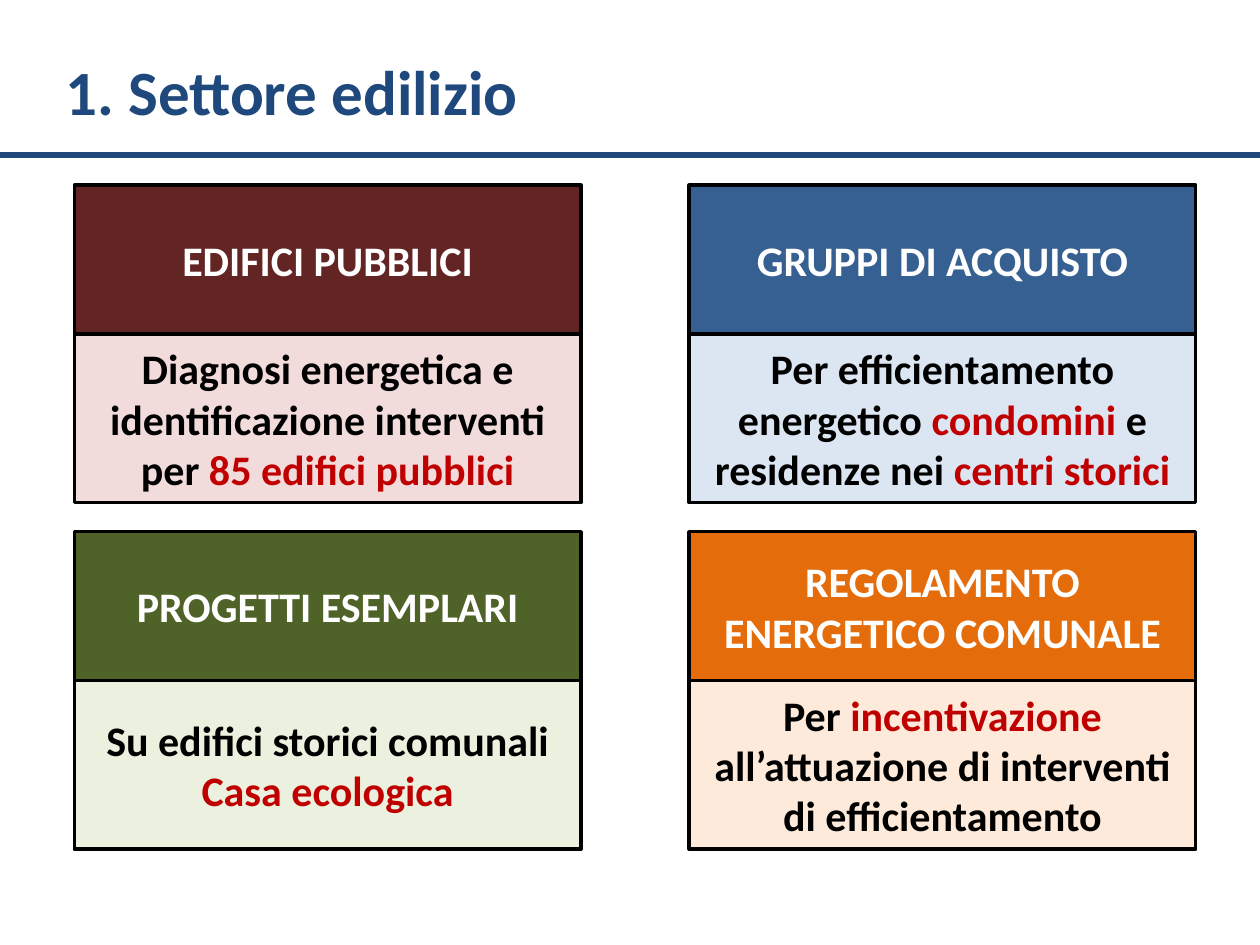
import pptx
import pptx.dml.color
import pptx.enum.shapes
import pptx.enum.text
import pptx.oxml.ns
import pptx.util
from lxml import etree

COLUMN_LEFTS = (0.59, 5.47)
ROW_TOPS = (1.47, 4.22)
CARD_WIDTH = 4.02
HEADING_HEIGHT = 1.18
DETAIL_HEIGHT = 1.34
NAVY, BLACK, WHITE, RED = "1F497D", "000000", "FFFFFF", "C00000"

CARDS = [
    (0, 0, "632523", "F2DCDB", "EDIFICI PUBBLICI",
     [[("Diagnosi energetica e identificazione interventi per ", BLACK),
       ("85 edifici pubblici", RED)]]),
    (1, 0, "376092", "DCE6F2", "GRUPPI DI ACQUISTO",
     [[("Per efficientamento energetico ", BLACK), ("condomini ", RED),
       ("e residenze nei ", BLACK), ("centri storici", RED)]]),
    (1, 1, "E46C0A", "FDEADA", "REGOLAMENTO ENERGETICO COMUNALE",
     [[("Per ", BLACK), ("incentivazione", RED),
       (" all’attuazione di interventi di efficientamento", BLACK)]]),
    (0, 1, "4F6228", "EBF1DE", "PROGETTI ESEMPLARI",
     [[("Su edifici storici comunali", BLACK)], [("Casa ecologica", RED)]]),
]


def color(hex_code):
    """Return the colour for a hex string."""
    return pptx.dml.color.RGBColor.from_string(hex_code)


def write_text(frame, paragraphs, size=24, align="CENTER"):
    """Fill a text frame with paragraphs of (wording, colour) runs."""
    frame.word_wrap = True
    frame.vertical_anchor = pptx.enum.text.MSO_ANCHOR.MIDDLE
    for index, runs in enumerate(paragraphs):
        paragraph = frame.add_paragraph() if index else frame.paragraphs[0]
        paragraph.alignment = getattr(pptx.enum.text.PP_ALIGN, align)
        for wording, hex_code in runs:
            run = paragraph.add_run()
            run.text = wording
            run.font.name = "Calibri"
            run.font.size = pptx.util.Pt(size)
            run.font.bold = True
            run.font.color.rgb = color(hex_code)


def add_panel(slide, left, top, height, fill, paragraphs):
    """Add one outlined rectangle of a card with its text."""
    panel = slide.shapes.add_shape(
        pptx.enum.shapes.MSO_SHAPE.RECTANGLE,
        *map(pptx.util.Inches, (left, top, CARD_WIDTH, height)))
    panel.shadow.inherit = False
    panel.fill.solid()
    panel.fill.fore_color.rgb = color(fill)
    panel.line.color.rgb = color(BLACK)
    panel.line.width = pptx.util.Pt(2)
    write_text(panel.text_frame, paragraphs)


def add_card(slide, column, row, dark, light, heading, details):
    """Add a heading panel with its detail panel below."""
    left, top = COLUMN_LEFTS[column], ROW_TOPS[row]
    add_panel(slide, left, top, HEADING_HEIGHT, dark, [[(heading, WHITE)]])
    add_panel(slide, left, top + HEADING_HEIGHT, DETAIL_HEIGHT, light, details)


def add_title(slide, wording):
    """Place and format the slide title."""
    title = slide.shapes.title
    title.left, title.top, title.width, title.height = map(
        pptx.util.Inches, (0.42, 0.36, 8.91, 0.71))
    title.fill.solid()
    title.fill.fore_color.rgb = color(WHITE)
    write_text(title.text_frame, [[(wording, NAVY)]], size=36, align="LEFT")


def add_rule(slide, width):
    """Draw the rule below the title across the slide."""
    height = pptx.util.Inches(1.23)
    rule = slide.shapes.add_connector(
        pptx.enum.shapes.MSO_CONNECTOR.STRAIGHT, 0, height, width, height)
    rule.line.color.rgb = color(NAVY)
    rule.line.width = pptx.util.Pt(3)
    etree.SubElement(rule._element.spPr, pptx.oxml.ns.qn("a:effectLst"))


def main():
    """Build and save the slide."""
    deck = pptx.Presentation()
    deck.slide_width = pptx.util.Inches(10)
    deck.slide_height = pptx.util.Inches(7.5)
    slide = deck.slides.add_slide(deck.slide_layouts.get_by_name("Title Only"))
    add_rule(slide, deck.slide_width)
    add_title(slide, "1. Settore edilizio")
    for card in CARDS:
        add_card(slide, *card)
    deck.save("out.pptx")


if __name__ == "__main__":
    main()
